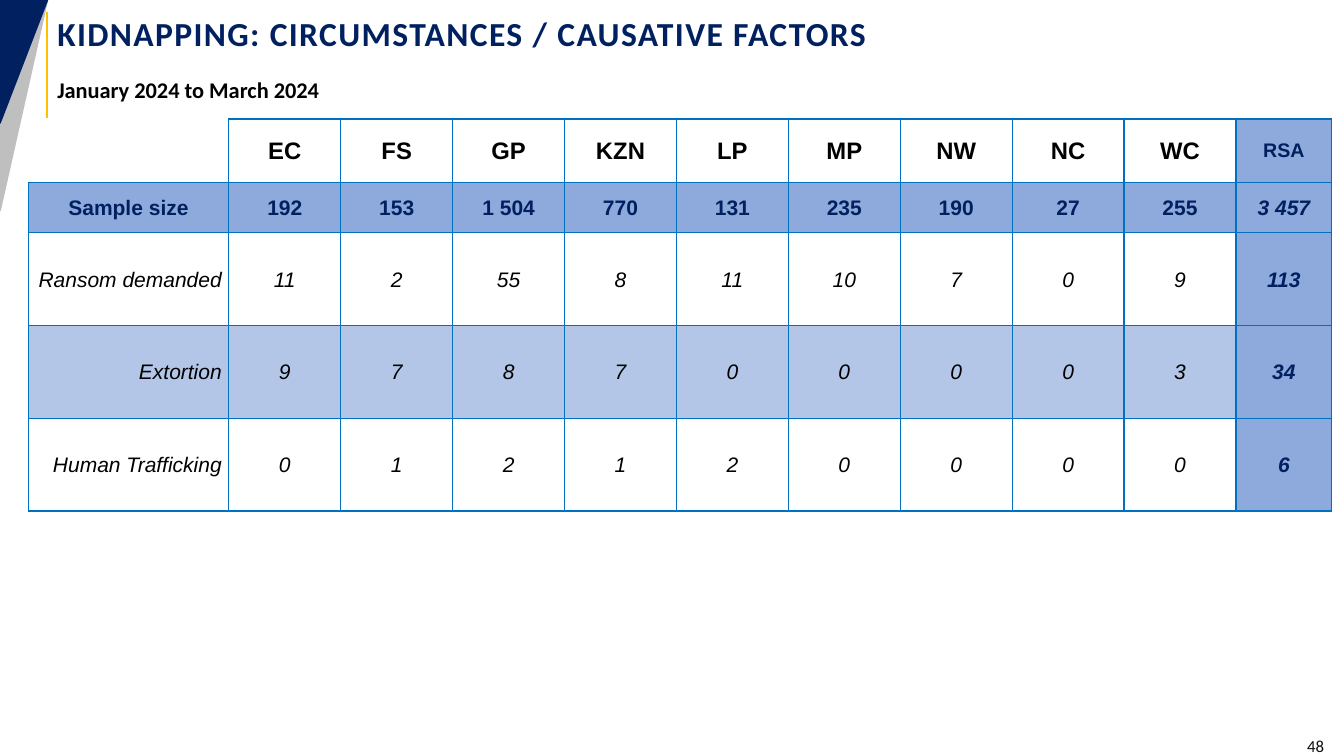
from lxml.etree import SubElement
from pptx import Presentation
from pptx.dml.color import RGBColor
from pptx.enum.shapes import MSO_CONNECTOR as Connector, MSO_SHAPE as Shape
from pptx.enum.text import MSO_ANCHOR as Anchor, PP_ALIGN as Align
from pptx.oxml.ns import qn
from pptx.util import Pt

PX = 9144  # 100 px to the inch
COLORS = {
    "navy": "002060", "grey": "BFBFBF", "gold": "FFC000", "black": "000000",
    "number": "0D0D0D", "border": "0070C0", "total": "8EA9DB", "band": "B4C6E7",
}
ROWS = [
    ["", "EC", "FS", "GP", "KZN", "LP", "MP", "NW", "NC", "WC", "RSA"],
    ["Sample size", "192", "153", "1 504", "770", "131", "235", "190", "27", "255", "3 457"],
    ["Ransom demanded", "11", "2", "55", "8", "11", "10", "7", "0", "9", "113"],
    ["Extortion", "9", "7", "8", "7", "0", "0", "0", "0", "3", "34"],
    ["Human Trafficking", "0", "1", "2", "1", "2", "0", "0", "0", "0", "6"],
]
COLUMN_WIDTHS = [199] + [111] * 9 + [95]
ROW_HEIGHTS = [63, 50] + [92] * 3
LAST_COLUMN = len(COLUMN_WIDTHS) - 1


def rgb(name):
    return RGBColor.from_string(COLORS[name])


def style_font(font, face, size, color, bold=False, italic=False):
    font.name, font.size = face, Pt(size)
    font.bold, font.italic = bold, italic
    font.color.rgb = rgb(color)


deck = Presentation()
deck.slide_width, deck.slide_height = 1333 * PX, 750 * PX
page = deck.slides.add_slide(deck.slide_layouts[6])

# Corner decoration
for height, color in [(209, "grey"), (122, "navy")]:
    corner = page.shapes.add_shape(Shape.RIGHT_TRIANGLE, 0, 0, 47 * PX, height * PX)
    corner.shadow.inherit = False
    corner._element.spPr.xfrm.set("flipV", "1")
    corner.fill.solid()
    corner.fill.fore_color.rgb = rgb(color)
    corner.line.color.rgb = rgb(color)
    corner.line.width = Pt(1.25)

rule = page.shapes.add_connector(Connector.STRAIGHT, 47 * PX, 117 * PX, 47 * PX, 12 * PX)
rule.line.color.rgb = rgb("gold")
rule.line.width = Pt(1.25)
SubElement(rule._element.spPr, qn("a:effectLst"))

# Title, period and page number
texts = [
    ("KIDNAPPING: CIRCUMSTANCES / CAUSATIVE FACTORS", (47, 12, 1196, 49),
     24, "navy", True, Anchor.MIDDLE, Align.LEFT),
    ("January 2024 to March 2024", (47, 68, 1196, 48),
     16, "black", True, Anchor.TOP, Align.LEFT),
    ("48", (1185, 727, 138, 26), 12, "number", False, Anchor.MIDDLE, Align.RIGHT),
]
paragraphs = []
for text, place, size, color, bold, anchor, align in texts:
    box = page.shapes.add_textbox(*[length * PX for length in place])
    box.text_frame.word_wrap = True
    box.text_frame.vertical_anchor = anchor
    para = box.text_frame.paragraphs[0]
    para.text = text
    para.alignment = align
    style_font(para.font, "Calibri", size, color, bold)
    paragraphs.append(para)

title, period, _ = paragraphs
title.line_spacing = 0.8
title.runs[0].font._element.set("spc", "100")
period.line_spacing = 1.08
period.space_before, period.space_after = Pt(6), Pt(2)

# Table of factors by province
frame = page.shapes.add_table(
    len(ROWS), len(COLUMN_WIDTHS), 28 * PX, 118 * PX,
    sum(COLUMN_WIDTHS) * PX, sum(ROW_HEIGHTS) * PX)
table = frame.table
table.first_row = table.horz_banding = False
for column, width in zip(table.columns, COLUMN_WIDTHS):
    column.width = width * PX
for row, height in zip(table.rows, ROW_HEIGHTS):
    row.height = height * PX

for r, values in enumerate(ROWS):
    for c, value in enumerate(values):
        cell = table.cell(r, c)
        is_label = c == 0 and r > 1
        is_total = c == LAST_COLUMN
        is_corner = r == 0 and c == 0

        for side in ("lnL", "lnR", "lnT", "lnB"):
            edge = SubElement(cell._tc.get_or_add_tcPr(), qn(f"a:{side}"), w=str(Pt(1)))
            if is_corner and side in ("lnL", "lnT"):
                SubElement(edge, qn("a:noFill"))
            else:
                paint = SubElement(edge, qn("a:solidFill"))
                SubElement(paint, qn("a:srgbClr"), val=COLORS["border"])

        if is_total or r in (1, 3):
            cell.fill.solid()
            cell.fill.fore_color.rgb = rgb("total" if is_total or r == 1 else "band")
        else:
            cell.fill.background()

        cell.vertical_anchor = Anchor.MIDDLE
        cell.margin_left = cell.margin_top = 1 * PX
        cell.margin_right = (7 if is_label else 1) * PX
        cell.margin_bottom = 0
        para = cell.text_frame.paragraphs[0]
        para.text = value
        para.alignment = Align.RIGHT if is_label else Align.CENTER
        size = 15 if r else 14 if is_total else 17
        style_font(para.font, "Arial", size,
                   color="navy" if is_total or r == 1 else "black",
                   bold=is_total or r < 2,
                   italic=r > 1 or (is_total and r == 1))

deck.save("out.pptx")
